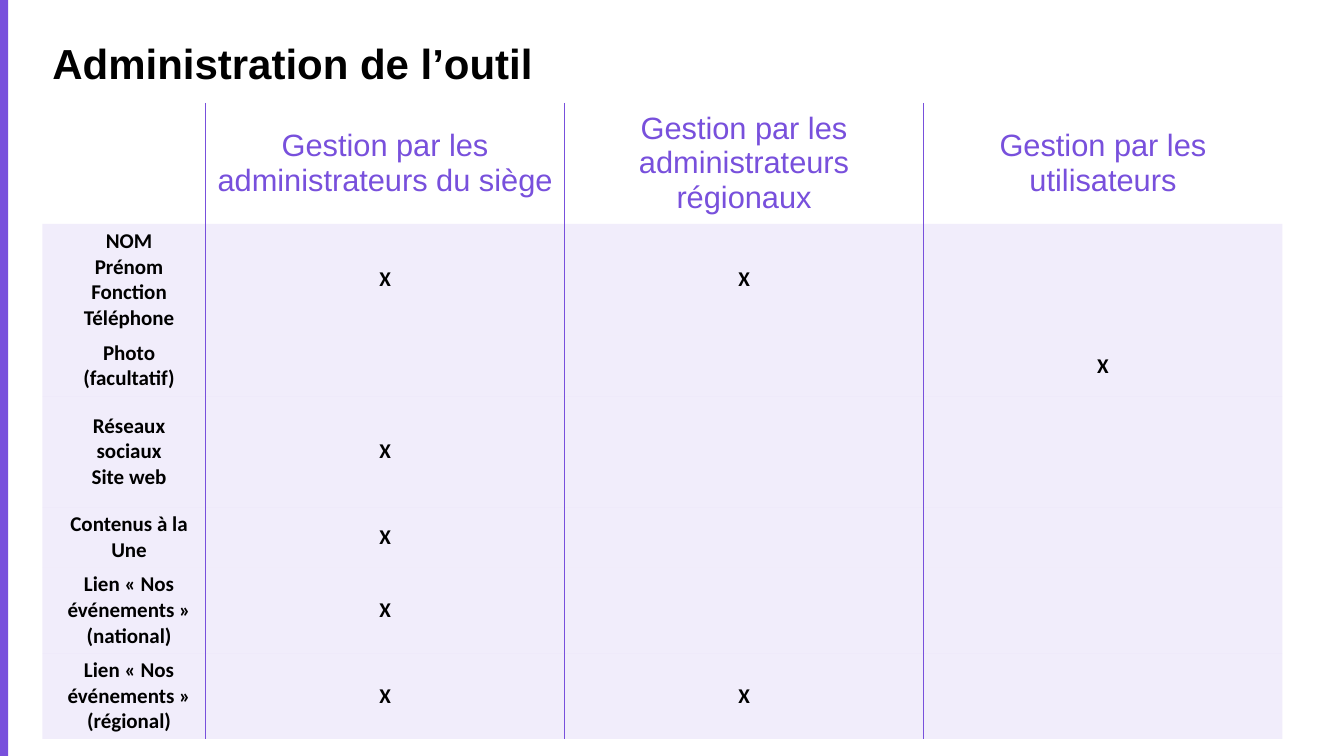
from lxml import etree
from pptx import Presentation
from pptx import util as u
from pptx.dml.color import RGBColor
from pptx.enum import shapes, text
from pptx.oxml import ns

VIOLET = RGBColor(0x78, 0x50, 0xDC)
BLACK = RGBColor(0, 0, 0)
TINT = 10  # opacity of the body cells, in percent

COLS = [1.62, 3.56, 3.56, 3.56]
ROWS = [1.2, 1.11, 0.6, 1.1, 0.6, 0.85, 0.85]
HEADS = [
    "",
    "Gestion par les administrateurs du siège",
    "Gestion par les administrateurs régionaux",
    "Gestion par les utilisateurs",
]
# Each right: label, then the columns that are ticked
RIGHTS = [
    ("NOM\nPrénom\nFonction\nTéléphone", (1, 2)),
    ("Photo (facultatif)", (3,)),
    ("Réseaux sociaux\vSite web", (1,)),
    ("Contenus à la Une", (1,)),
    ("Lien « Nos événements » (national)", (1,)),
    ("Lien « Nos événements » (régional)", (1, 2)),
]


def sub(node, tag, **attrs):
    return etree.SubElement(node, ns.qn(tag), attrs)


def style(par, name, size, color, bold):
    font = par.font
    font.name, font.size, font.bold = name, u.Pt(size), bold
    font.color.rgb = color


def rule(cell, col):
    """Draw only the lines between columns."""
    props = cell._tc.get_or_add_tcPr()
    shown = {"L": col > 0, "R": col < len(COLS) - 1}
    for side in "LRTB":
        line = sub(props, f"a:ln{side}", w=str(u.Pt(0.5)))
        if shown.get(side):
            sub(sub(line, "a:solidFill"), "a:srgbClr", val=str(VIOLET))
        else:
            sub(line, "a:noFill")


def tint(cell):
    cell.fill.solid()
    cell.fill.fore_color.rgb = VIOLET
    color = cell._tc.tcPr.find(".//" + ns.qn("a:solidFill") + "[last()]")
    color = cell._tc.tcPr.find(ns.qn("a:solidFill"))[0]
    sub(color, "a:alpha", val=str(TINT * 1000))


def write(cell, words, row, col):
    cell.text = words
    cell.vertical_anchor = text.MSO_ANCHOR.MIDDLE
    if row:
        cell.margin_left = u.Inches(0.2)
        cell.margin_right = u.Inches(0.2 if col else 0.1)
        cell.margin_top = cell.margin_bottom = u.Inches(0 if col else 0.04)
    for par in cell.text_frame.paragraphs:
        par.alignment = text.PP_ALIGN.CENTER
        if row:
            style(par, "Calibri", 15, BLACK, True)
        else:
            style(par, "Arial", 22, VIOLET, False)


def add_grid(slide, left, top):
    frame = slide.shapes.add_table(
        len(ROWS), len(COLS), u.Inches(left), u.Inches(top),
        u.Inches(sum(COLS)), u.Inches(sum(ROWS)))
    table = frame.table
    table.first_row = table.horz_banding = False
    for column, width in zip(table.columns, COLS):
        column.width = u.Inches(width)
    for line, height in zip(table.rows, ROWS):
        line.height = u.Inches(height)

    ticks = [[label] + ["X" if col in marks else "" for col in range(1, len(COLS))]
             for label, marks in RIGHTS]
    for row, words in enumerate([HEADS] + ticks):
        for col, word in enumerate(words):
            cell = table.cell(row, col)
            rule(cell, col)
            if row:
                tint(cell)
            else:
                cell.fill.background()
            if word:
                write(cell, word, row, col)


def add_band(slide, width, height):
    band = slide.shapes.add_shape(
        shapes.MSO_SHAPE.RECTANGLE, 0, 0, u.Inches(width), height)
    band.shadow.inherit = False
    band.fill.solid()
    band.fill.fore_color.rgb = VIOLET
    band.line.fill.background()


def add_title(slide, words, *box):
    frame = slide.shapes.add_textbox(*map(u.Inches, box)).text_frame
    frame.word_wrap = True
    frame.margin_left = frame.margin_right = 0
    frame.margin_top = frame.margin_bottom = 0
    frame.text = words
    style(frame.paragraphs[0], "Arial", 30, BLACK, True)


def main():
    deck = Presentation()
    deck.slide_width, deck.slide_height = u.Inches(13.33), u.Inches(7.5)
    slide = deck.slides.add_slide(deck.slide_layouts[6])
    add_band(slide, 0.08, deck.slide_height)
    add_title(slide, "Administration de l’outil", 0.52, 0.37, 9.83, 0.5)
    add_grid(slide, 0.42, 1.02)
    deck.save("out.pptx")


if __name__ == "__main__":
    main()
